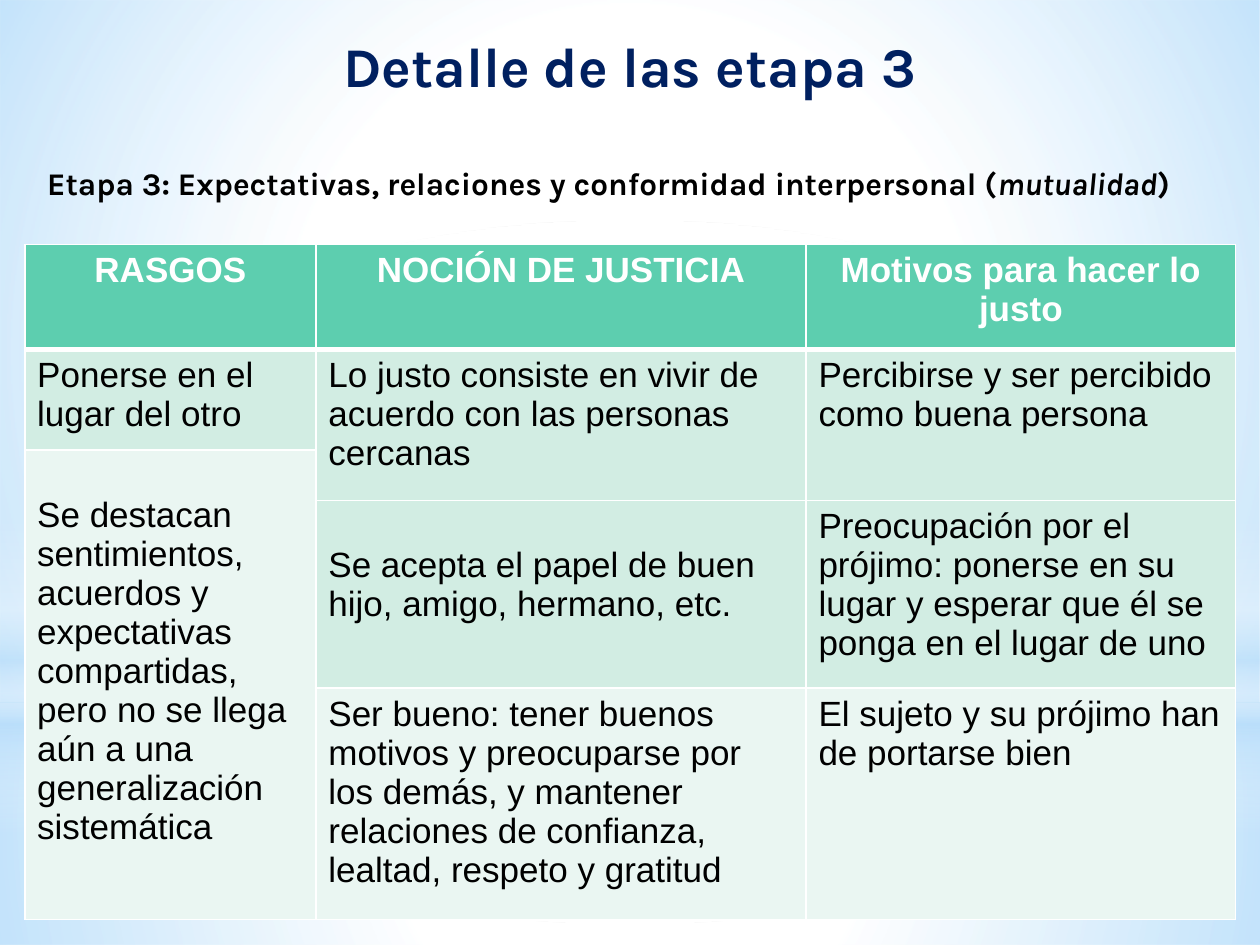
from lxml import etree
from pptx import Presentation
from pptx.dml.color import RGBColor
from pptx.enum import shapes, text
from pptx.oxml import ns
from pptx.util import Cm, Pt

THEME = {
    "title_font": "Karla", "table_font": "Arial",
    "title_size": 32, "subtitle_size": 18, "table_size": 20,
    "navy": "002060", "black": "000000", "white": "FFFFFF", "sky": "B4DCFA",
    "header": "5DCEAF", "mint": "D2EDE3", "pale": "EAF6F2",
}

TITLE = "Detalle de las etapa 3"
SUBTITLE = [
    ("Etapa 3: Expectativas, relaciones y conformidad interpersonal (", False),
    ("mutualidad", True),
    (")", False),
]
HEADERS = ["RASGOS", "NOCIÓN DE JUSTICIA", "Motivos para hacer lo justo"]

# row, column, rows spanned, fill, starts one line lower, wording
BODY = [
    (1, 0, 1, "mint", False, "Ponerse en el lugar del otro"),
    (1, 1, 2, "mint", False,
     "Lo justo consiste en vivir de acuerdo con las personas cercanas"),
    (1, 2, 2, "mint", False, "Percibirse y ser percibido como buena persona"),
    (2, 0, 3, "pale", True,
     "Se destacan sentimientos, acuerdos y expectativas compartidas, "
     "pero no se llega aún a una generalización sistemática"),
    (3, 1, 1, "mint", True, "Se acepta el papel de buen hijo, amigo, hermano, etc."),
    (3, 2, 1, "mint", False,
     "Preocupación por el prójimo: ponerse en su lugar y esperar que él "
     "se ponga en el lugar de uno"),
    (4, 1, 1, "pale", False,
     "Ser bueno: tener buenos motivos y preocuparse por los demás, y mantener "
     "relaciones de confianza, lealtad, respeto y gratitud"),
    (4, 2, 1, "pale", False, "El sujeto y su prójimo han de portarse bien"),
]
COLUMN_WIDTHS = [5.87, 9.88, 8.66]
ROW_HEIGHTS = [2.11, 2.03, 1.02, 3.78, 4.67]

# shape, top, height, radial, (position, colour, opacity) in percent
BACKDROP = [
    ("RECTANGLE", 14.17, 4.88, True,
     [(0, "white", 91), (37, "white", 76), (100, "sky", 79)]),
    ("RECTANGLE", 0, 14.17, True,
     [(0, "white", 89), (48, "white", 62), (100, "sky", 79)]),
    ("RECTANGLE", 10.46, 6.35, False,
     [(0, "white", 0), (29, "white", 30), (45, "sky", 40),
      (55, "white", 26), (65, "sky", 60), (100, "white", 0)]),
    ("OVAL", 4.45, 14.17, True, [(0, "white", 100), (56, "white", 0)]),
]
PAGE_WIDTH, PAGE_HEIGHT = 25.4, 19.05
LINE_HEIGHT = 0.79


def colour(name):
    return RGBColor.from_string(THEME[name])


def add_node(parent, tag, **attributes):
    node = etree.SubElement(parent, ns.qn(tag))
    for key, value in attributes.items():
        node.set(key, str(value))
    return node


def write(frame, spans, font="table_font", size="table_size", tint="black",
          bold=False, align=text.PP_ALIGN.LEFT):
    """Fill a text frame with one paragraph of (wording, italic) spans."""
    frame.word_wrap = True
    para = frame.paragraphs[0]
    para.alignment = align
    for wording, italic in spans:
        span = para.add_run()
        span.text = wording
        span.font.name = THEME[font]
        span.font.size = Pt(THEME[size])
        span.font.color.rgb = colour(tint)
        span.font.bold = bold
        span.font.italic = italic


def set_gradient(shape, stops, radial):
    gradient = etree.Element(ns.qn("a:gradFill"), rotWithShape="1")
    stop_list = add_node(gradient, "a:gsLst")
    for position, name, opacity in stops:
        stop = add_node(stop_list, "a:gs", pos=position * 1000)
        tint = add_node(stop, "a:srgbClr", val=THEME[name])
        add_node(tint, "a:alpha", val=opacity * 1000)
    if radial:
        circle = add_node(gradient, "a:path", path="circle")
        add_node(circle, "a:fillToRect", l=50000, t=50000, r=50000, b=50000)
    else:
        add_node(gradient, "a:lin", ang=5400000, scaled=0)
    shape._element.spPr.find(ns.qn("a:prstGeom")).addnext(gradient)


def add_backdrop(page):
    """Draw the soft light shapes and hand them to the layout, behind the content."""
    layout_tree = page.slide_layout.shapes._spTree
    for number, (kind, top, height, radial, stops) in enumerate(BACKDROP, 100):
        shape = page.shapes.add_shape(
            getattr(shapes.MSO_SHAPE, kind),
            Cm(0), Cm(top), Cm(PAGE_WIDTH), Cm(height))
        shape.shadow.inherit = False
        shape.line.fill.background()
        set_gradient(shape, stops, radial)
        shape._element.nvSpPr.cNvPr.set("id", str(number))
        layout_tree.append(shape._element)


def set_borders(cell, row):
    properties = cell._tc.get_or_add_tcPr()
    widths = {"L": 1, "R": 1, "T": 3 if row == 1 else 1, "B": 3 if row == 0 else 1}
    for index, (side, width) in enumerate(widths.items()):
        line = etree.Element(ns.qn(f"a:ln{side}"), w=str(Pt(width)))
        fill = add_node(line, "a:solidFill")
        add_node(fill, "a:srgbClr", val=THEME["white"])
        properties.insert(index, line)


def fill_cell(cell, wording, fill, lowered=False, **style):
    cell.fill.solid()
    cell.fill.fore_color.rgb = colour(fill)
    cell.margin_left = cell.margin_right = Cm(0.25)
    cell.margin_top = Cm(0.13 + LINE_HEIGHT * lowered)
    cell.margin_bottom = Cm(0.13)
    write(cell.text_frame, [(wording, False)], **style)


def add_stage_table(page):
    table = page.shapes.add_table(
        len(ROW_HEIGHTS), len(COLUMN_WIDTHS), Cm(0.5), Cm(4.93),
        Cm(sum(COLUMN_WIDTHS)), Cm(sum(ROW_HEIGHTS))).table
    for column, width in zip(table.columns, COLUMN_WIDTHS):
        column.width = Cm(width)
    for row, height in zip(table.rows, ROW_HEIGHTS):
        row.height = Cm(height)
    for column, heading in enumerate(HEADERS):
        fill_cell(table.cell(0, column), heading, "header", tint="white",
                  bold=True, align=text.PP_ALIGN.CENTER)
    for row, column, rows, fill, lowered, wording in BODY:
        cell = table.cell(row, column)
        if rows > 1:
            cell.merge(table.cell(row + rows - 1, column))
        fill_cell(cell, wording, fill, lowered)
    for row in range(len(ROW_HEIGHTS)):
        for column in range(len(COLUMN_WIDTHS)):
            set_borders(table.cell(row, column), row)


def main():
    deck = Presentation()
    deck.slide_width, deck.slide_height = Cm(PAGE_WIDTH), Cm(PAGE_HEIGHT)
    page = deck.slides.add_slide(deck.slide_layouts.get_by_name("Title Only"))
    add_backdrop(page)
    add_stage_table(page)

    title = page.shapes.title
    title.left, title.top, title.width, title.height = (
        Cm(0), Cm(0.5), Cm(PAGE_WIDTH), Cm(1.62))
    title.text_frame.vertical_anchor = text.MSO_ANCHOR.TOP
    write(title.text_frame, [(TITLE, False)], font="title_font",
          size="title_size", tint="navy", bold=True, align=text.PP_ALIGN.CENTER)

    subtitle = page.shapes.add_textbox(Cm(0.7), Cm(3.18), Cm(23.6), Cm(1.02))
    write(subtitle.text_frame, SUBTITLE, font="title_font",
          size="subtitle_size", bold=True)
    deck.save("out.pptx")


if __name__ == "__main__":
    main()
